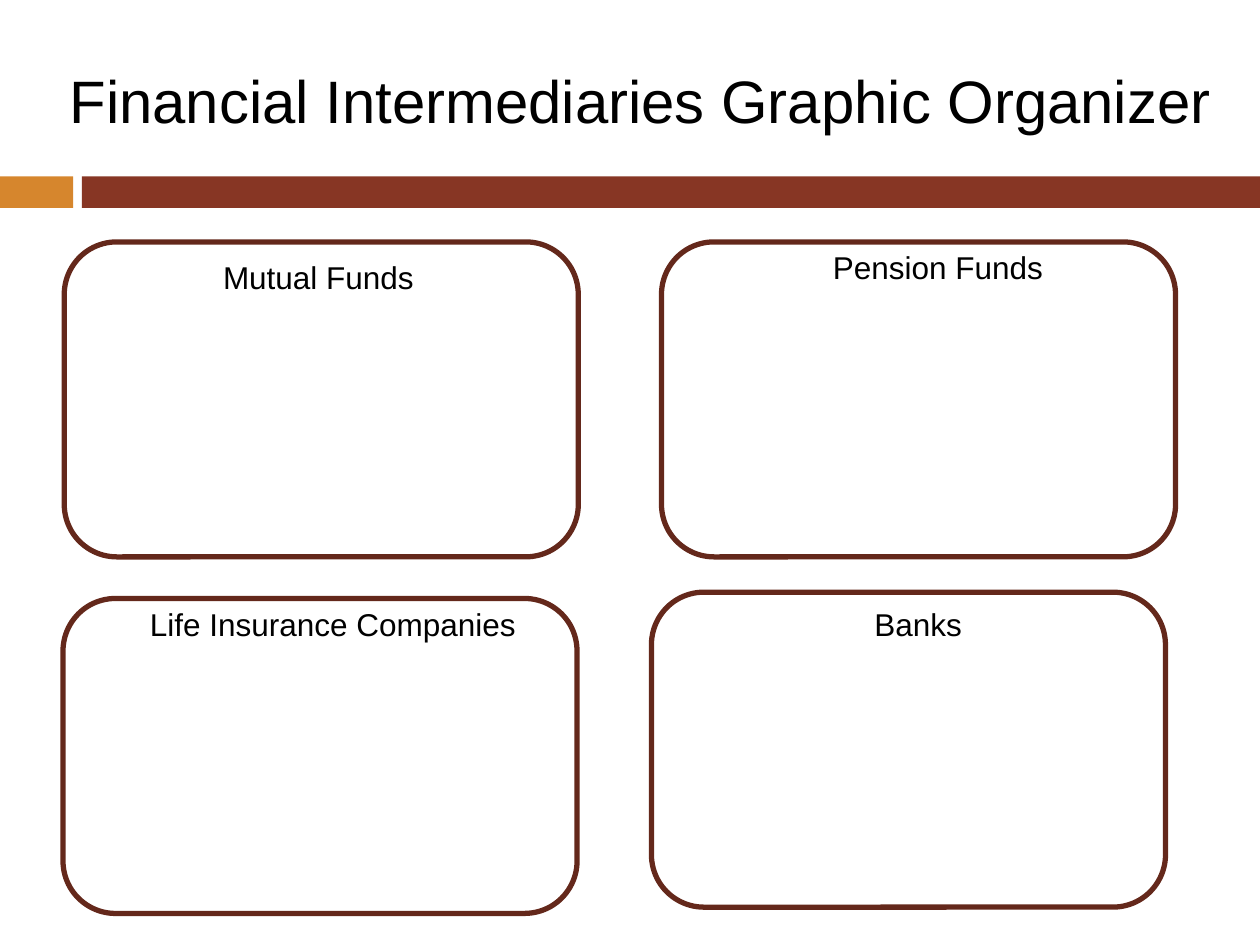
from dataclasses import dataclass

from pptx import Presentation
from pptx.dml.color import RGBColor
from pptx.enum.shapes import MSO_SHAPE
from pptx.enum.text import MSO_ANCHOR, MSO_AUTO_SIZE, PP_ALIGN
from pptx.util import Inches, Pt


@dataclass(frozen=True)
class Theme:
    font: str = "Arial"
    ink: str = "000000"
    amber: str = "D6862D"
    rust: str = "873624"
    edge: str = "64281B"
    title: float = 34.2
    label: float = 18
    line: float = 3


class Deck:
    def __init__(self, theme):
        self.theme = theme
        self.file = Presentation()
        self.file.slide_width = Inches(10)
        self.file.slide_height = Inches(7.5)
        self.slide = self.file.slides.add_slide(self.file.slide_layouts[5])

    def style(self, frame, text, size, align):
        frame.text = text
        frame.word_wrap = True
        frame.vertical_anchor = MSO_ANCHOR.MIDDLE
        first = frame.paragraphs[0]
        first.alignment = align
        font = first.runs[0].font
        font.name = self.theme.font
        font.size = Pt(size)
        font.color.rgb = RGBColor.from_string(self.theme.ink)

    def title(self, text, left, top, width, height):
        shape = self.slide.shapes.title
        shape.left, shape.top = Inches(left), Inches(top)
        shape.width, shape.height = Inches(width), Inches(height)
        self.style(shape.text_frame, text, self.theme.title, PP_ALIGN.CENTER)
        shape.text_frame.auto_size = MSO_AUTO_SIZE.NONE

    def shape(self, kind, left, top, width, height):
        shape = self.slide.shapes.add_shape(
            kind, Inches(left), Inches(top), Inches(width), Inches(height))
        shape.shadow.inherit = False
        return shape

    def bar(self, left, width, color):
        shape = self.shape(MSO_SHAPE.RECTANGLE, left, 1.4, width, 0.25)
        shape.fill.solid()
        shape.fill.fore_color.rgb = RGBColor.from_string(color)
        shape.line.fill.background()

    def panel(self, left, top):
        shape = self.shape(MSO_SHAPE.ROUNDED_RECTANGLE, left, top, 4.08, 2.5)
        shape.fill.background()
        shape.line.color.rgb = RGBColor.from_string(self.theme.edge)
        shape.line.width = Pt(self.theme.line)

    def label(self, text, left, top, width):
        box = self.slide.shapes.add_textbox(
            Inches(left), Inches(top), Inches(width), Inches(0.4))
        frame = box.text_frame
        self.style(frame, text, self.theme.label, PP_ALIGN.LEFT)
        frame.margin_left = Inches(0.69)
        frame.margin_right = 0
        frame.auto_size = MSO_AUTO_SIZE.SHAPE_TO_FIT_TEXT


def main():
    theme = Theme()
    deck = Deck(theme)
    deck.bar(0, 0.58, theme.amber)
    deck.bar(0.65, 9.35, theme.rust)
    deck.title("Financial Intermediaries Graphic Organizer",
               0.25, 0.16, 9.66, 1.26)
    for left, top in ((0.51, 1.92), (0.5, 4.75), (5.17, 4.7), (5.25, 1.92)):
        deck.panel(left, top)
    for text, left, top, width in (
        ("Mutual Funds", 1.08, 2, 2.32),
        ("Pension Funds", 5.92, 1.92, 2.48),
        ("Life Insurance Companies", 0.5, 4.75, 3.83),
        ("Banks", 6.25, 4.75, 1.5),
    ):
        deck.label(text, left, top, width)
    deck.file.save("out.pptx")


if __name__ == "__main__":
    main()
